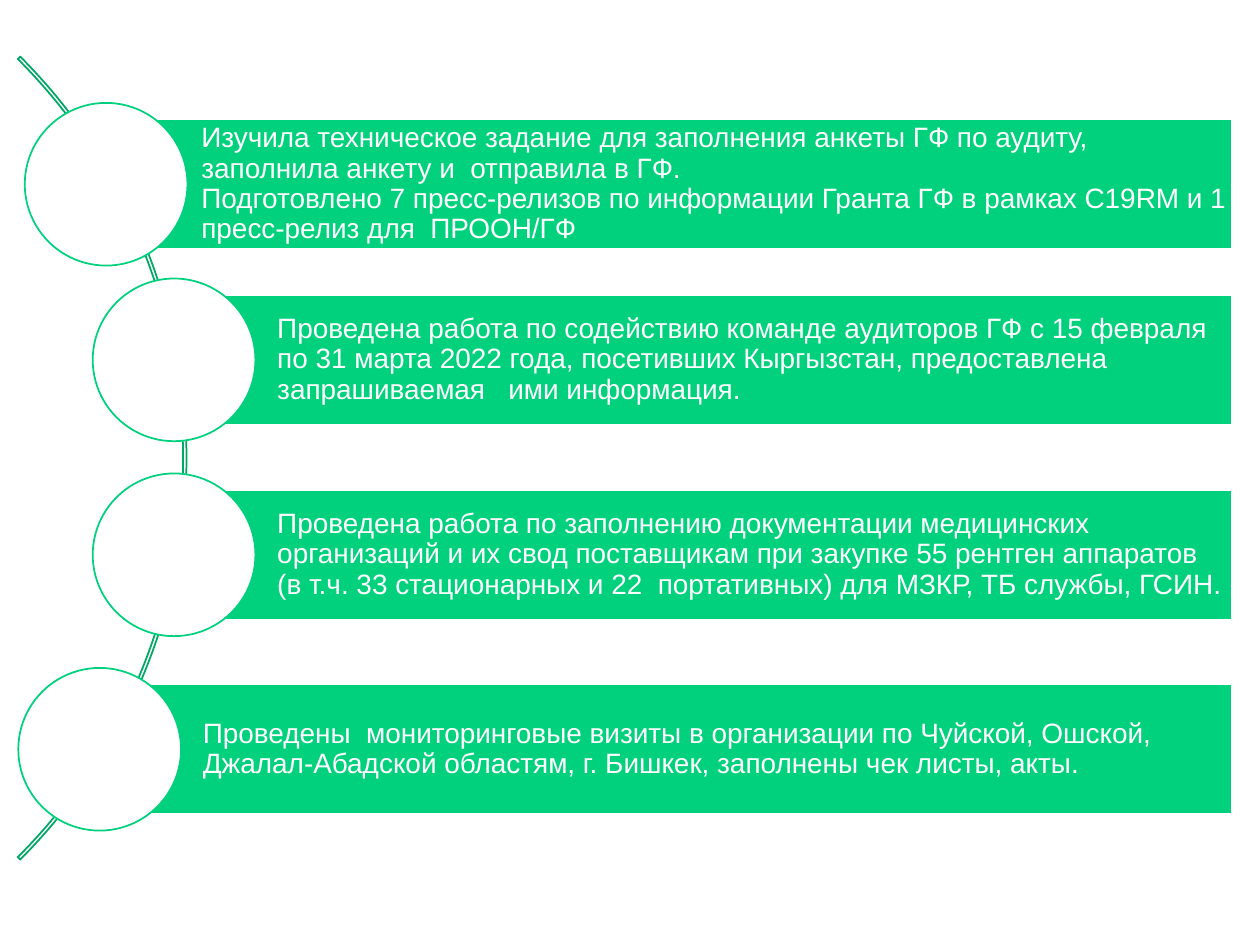
from pptx import Presentation
from pptx.dml.color import RGBColor
from pptx.enum.shapes import MSO_SHAPE
from pptx.enum.text import MSO_ANCHOR, PP_ALIGN
from pptx.util import Cm, Pt

GREEN = RGBColor(0x01, 0xD1, 0x7D)
DARK_GREEN = RGBColor(0x01, 0xA7, 0x64)
WHITE = RGBColor(0xFF, 0xFF, 0xFF)

BAR_RIGHT = 24.83
BAR_HEIGHT = 2.61
CIRCLE_SIZE = 3.28
ARC_BOX = (-19.13, -2.21, 22.89, 22.89)

# Bar left, bar top, shift of the circle centre from the bar's left edge, text
ROWS = [
    (1.98, 2.41, 0.16,
     "Изучила техническое задание для заполнения анкеты ГФ по аудиту, "
     "заполнила анкету и  отправила в ГФ. \v"
     "Подготовлено 7 пресс-релизов по информации Гранта ГФ в рамках C19RM "
     "и 1 пресс-релиз для  ПРООН/ГФ"),
    (3.51, 5.95, 0,
     "Проведена работа по содействию команде аудиторов ГФ с 15 февраля "
     "по 31 марта 2022 года, посетивших Кыргызстан, предоставлена "
     "запрашиваемая   ими информация."),
    (3.51, 9.88, 0,
     "Проведена работа по заполнению документации медицинских организаций "
     "и их свод поставщикам при закупке 55 рентген аппаратов (в т.ч. 33 "
     "стационарных и 22  портативных) для МЗКР, ТБ службы, ГСИН."),
    (2.01, 13.8, 0,
     "Проведены  мониторинговые визиты в организации по Чуйской, Ошской, "
     "Джалал-Абадской областям, г. Бишкек, заполнены чек листы, акты."),
]

FRAME_FORMAT = {
    "word_wrap": True,
    "vertical_anchor": MSO_ANCHOR.MIDDLE,
    "margin_left": Cm(2.08),
    "margin_top": Cm(0.1),
    "margin_right": Cm(0.1),
    "margin_bottom": Cm(0.1),
}
PARA_FORMAT = {"alignment": PP_ALIGN.LEFT, "line_spacing": 0.9}
FONT_FORMAT = {"name": "Arial", "size": Pt(16)}


def apply_format(target, values):
    for name, value in values.items():
        setattr(target, name, value)


def add_outlined_shape(page, kind, box, fill, line):
    """Add a preset shape in a box of left, top, width, height in cm."""
    shape = page.shapes.add_shape(kind, *map(Cm, box))
    shape.shadow.inherit = False
    if fill is None:
        shape.fill.background()
    else:
        shape.fill.solid()
        shape.fill.fore_color.rgb = fill
    shape.line.color.rgb = line
    shape.line.width = Pt(1)
    return shape


def add_arc(page, box):
    arc = add_outlined_shape(page, MSO_SHAPE.BLOCK_ARC, box, None, DARK_GREEN)
    for index, value in enumerate((189, 27, 0.003)):
        arc.adjustments[index] = value


def add_row(page, box, circle_shift, text):
    """Add a text bar filling the box and a circle over its left edge."""
    left, top, _, height = box
    bar = add_outlined_shape(page, MSO_SHAPE.RECTANGLE, box, GREEN, WHITE)
    frame = bar.text_frame
    apply_format(frame, FRAME_FORMAT)
    para = frame.paragraphs[0]
    para.text = text
    apply_format(para, PARA_FORMAT)
    for span in para.runs:
        apply_format(span.font, FONT_FORMAT)
        span.font.color.rgb = WHITE

    circle_box = (left + circle_shift - CIRCLE_SIZE / 2,
                  top + (height - CIRCLE_SIZE) / 2, CIRCLE_SIZE, CIRCLE_SIZE)
    add_outlined_shape(page, MSO_SHAPE.OVAL, circle_box, WHITE, GREEN)


def main():
    deck = Presentation()
    deck.slide_width, deck.slide_height = Cm(25.4), Cm(19.05)
    page = deck.slides.add_slide(deck.slide_layouts[6])
    add_arc(page, ARC_BOX)
    for left, top, circle_shift, text in ROWS:
        box = (left, top, BAR_RIGHT - left, BAR_HEIGHT)
        add_row(page, box, circle_shift, text)
    deck.save("out.pptx")


if __name__ == "__main__":
    main()
